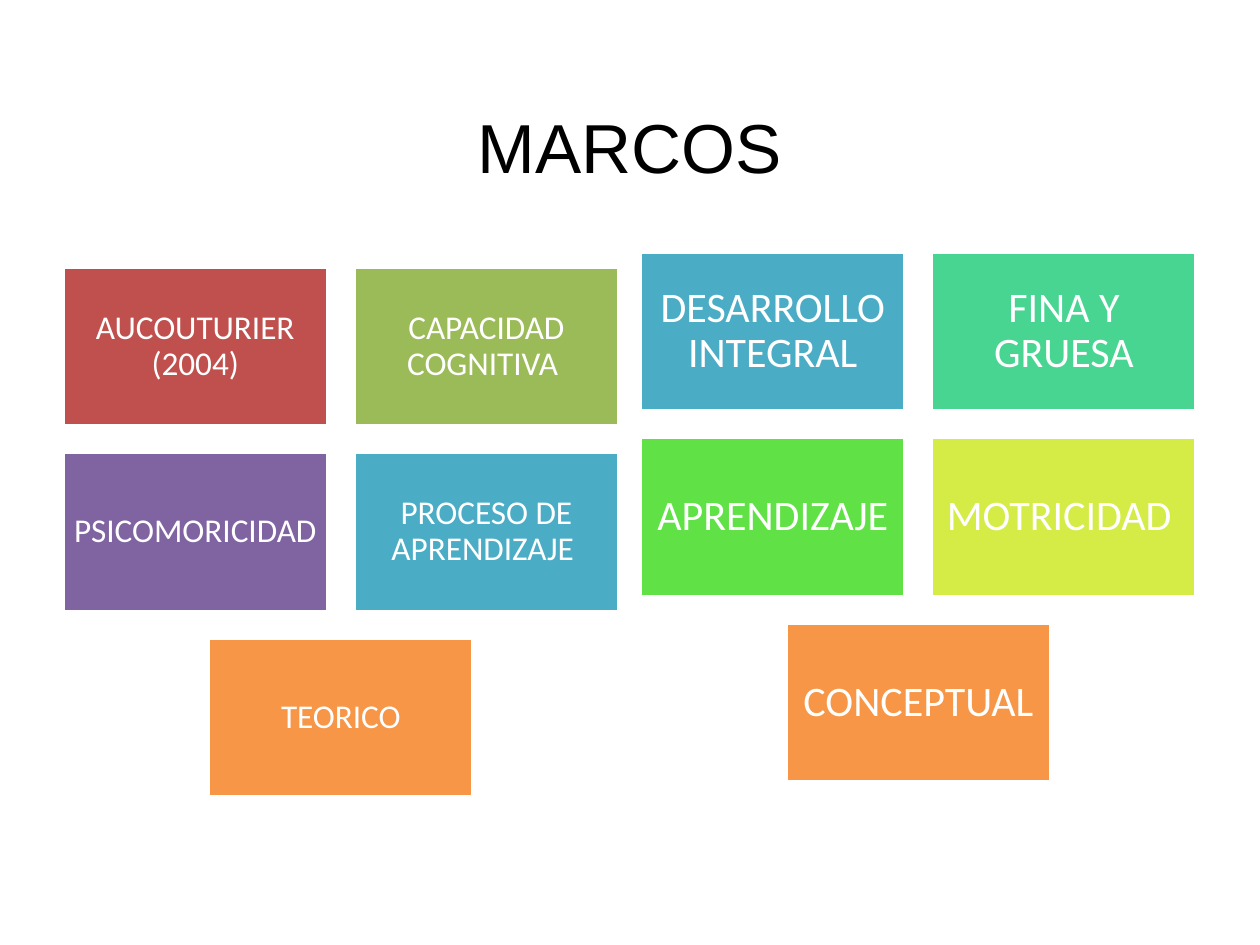
"""Build the MARCOS slide: two groups of five coloured blocks under a title."""
from pptx import Presentation
from pptx.dml.color import RGBColor
from pptx.enum.shapes import MSO_SHAPE
from pptx.enum.text import MSO_ANCHOR, PP_ALIGN
from pptx.util import Pt

RECTANGLE = MSO_SHAPE.RECTANGLE
MIDDLE = MSO_ANCHOR.MIDDLE
CENTER = PP_ALIGN.CENTER

TITLE_ONLY = 5
BLOCK_WIDTH, BLOCK_HEIGHT = 151.2, 90.7
COLUMN_STEP, ROW_STEP = 166.4, 106.1
CELLS = [(0, 0), (1, 0), (0, 1), (1, 1), (0.5, 2)]

GROUPS = [
    (36, 152.6, 19, 6, [
        ("AUCOUTURIER (2004)", "C0504D"),
        ("CAPACIDAD COGNITIVA ", "9BBB59"),
        ("PSICOMORICIDAD", "8064A2"),
        ("PROCESO DE APRENDIZAJE ", "4BACC6"),
        ("TEORICO", "F79646"),
    ]),
    (366, 144, 24, 7.2, [
        ("DESARROLLO INTEGRAL", "4BACC6"),
        ("FINA Y GRUESA", "48D491"),
        ("APRENDIZAJE ", "60E146"),
        ("MOTRICIDAD ", "D5EC46"),
        ("CONCEPTUAL", "F79646"),
    ]),
]


def color(value):
    """Turn a hex string into a colour."""
    return RGBColor.from_string(value)


def write(box, text, font_name, size, font_color):
    """Put one centred paragraph in the middle of a box."""
    frame = box.text_frame
    frame.word_wrap = True
    frame.vertical_anchor = MIDDLE
    frame.text = text
    para = frame.paragraphs[0]
    para.alignment = CENTER
    para.font.name = font_name
    para.font.size = Pt(size)
    para.font.color.rgb = color(font_color)
    return para


deck = Presentation()
deck.slide_width, deck.slide_height = Pt(720), Pt(540)
page = deck.slides.add_slide(deck.slide_layouts[TITLE_ONLY])

title = page.shapes.title
title.left, title.top, title.width, title.height = Pt(36), Pt(54.7), Pt(648), Pt(57)
write(title, "MARCOS", "Arial", 39.6, "000000")

for left, top, size, inset, blocks in GROUPS:
    for (column, row), (label, fill) in zip(CELLS, blocks):
        box = page.shapes.add_shape(
            RECTANGLE,
            Pt(left + column * COLUMN_STEP), Pt(top + row * ROW_STEP),
            Pt(BLOCK_WIDTH), Pt(BLOCK_HEIGHT))
        box.shadow.inherit = False
        box.fill.solid()
        box.fill.fore_color.rgb = color(fill)
        box.line.color.rgb = color("FFFFFF")
        box.line.width = Pt(2)
        frame = box.text_frame
        frame.margin_left = frame.margin_right = Pt(inset)
        frame.margin_top = frame.margin_bottom = Pt(inset)
        para = write(box, label, "Calibri", size, "FFFFFF")
        para.line_spacing = 0.9

deck.save("out.pptx")
